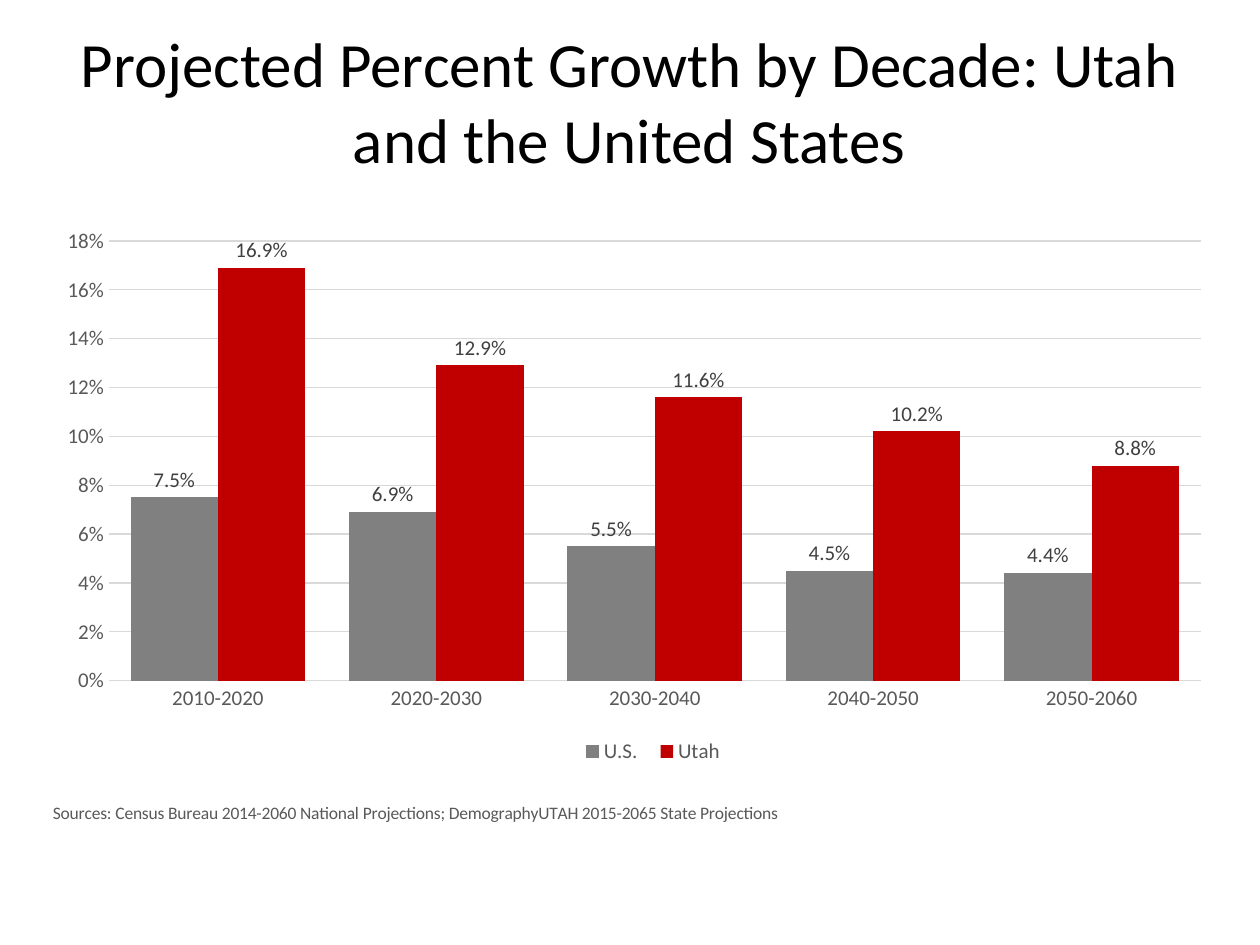
import pptx
import pptx.util
import pptx.chart.data
import pptx.enum.chart
import pptx.enum.text
import pptx.oxml
from pptx.dml.color import RGBColor
from pptx.util import Inches, Pt

# Content
TITLE = "Projected Percent Growth by Decade: Utah and the United States"
SOURCES = ("Sources: Census Bureau 2014-2060 National Projections; "
           "DemographyUTAH 2015-2065 State Projections")
DECADES = ["2010-2020", "2020-2030", "2030-2040", "2040-2050", "2050-2060"]
BLACK = RGBColor(0, 0, 0)
DARK_GRAY = RGBColor(0x40, 0x40, 0x40)
TEXT_GRAY = RGBColor(0x59, 0x59, 0x59)
GRID_GRAY = RGBColor(0xD9, 0xD9, 0xD9)
BAR_GRAY = RGBColor(0x80, 0x80, 0x80)
RED = RGBColor(0xC0, 0, 0)
GROWTH = [
    ("U.S.", BAR_GRAY, [0.075, 0.069, 0.055, 0.045, 0.044]),
    ("Utah", RED, [0.169, 0.129, 0.116, 0.102, 0.088]),
]
FONT = "Calibri"
LEFT, WIDTH = Inches(0.3), Inches(9.39)


def set_font(font, size, color):
    font.name, font.size, font.bold = FONT, Pt(size), False
    font.color.rgb = color


def place(element, index, x, y, width=None, height=None, inner=False):
    """Give a chart part a manual layout, in fractions of the chart."""
    for old in element.xpath("c:layout"):
        element.remove(old)
    target = '<c:layoutTarget val="inner"/>' if inner else ""
    sizes = "" if width is None else f'<c:w val="{width}"/><c:h val="{height}"/>'
    element.insert(index, pptx.oxml.parse_xml(
        '<c:layout xmlns:c="http://schemas.openxmlformats.org/drawingml/2006/chart">'
        f'<c:manualLayout>{target}<c:xMode val="edge"/><c:yMode val="edge"/>'
        f'<c:x val="{x}"/><c:y val="{y}"/>{sizes}</c:manualLayout></c:layout>'))


presentation = pptx.Presentation()
presentation.slide_width, presentation.slide_height = Inches(10), Inches(7.5)
slide = presentation.slides.add_slide(presentation.slide_layouts[5])

# Title
title = slide.shapes.title
title.left, title.top, title.width, title.height = LEFT, Inches(0.14), WIDTH, Inches(1.31)
title.text_frame.text = TITLE
title.text_frame.word_wrap = True
title.text_frame.auto_size = pptx.enum.text.MSO_AUTO_SIZE.NONE
paragraph = title.text_frame.paragraphs[0]
paragraph.alignment = pptx.enum.text.PP_ALIGN.CENTER
set_font(paragraph.font, 36, BLACK)

# Chart
data = pptx.chart.data.CategoryChartData(number_format="0.0%")
data.categories = DECADES
for name, color, values in GROWTH:
    data.add_series(name, values)
chart = slide.shapes.add_chart(
    pptx.enum.chart.XL_CHART_TYPE.COLUMN_CLUSTERED,
    LEFT, Inches(1.75), WIDTH, Inches(4.93), data).chart
chart.has_title = False
set_font(chart.font, 12, BLACK)
plot = chart.plots[0]
plot.gap_width, plot.overlap, plot.vary_by_categories = 50, 0, False
place(chart.element.xpath("c:chart/c:plotArea")[0], 0, 0.06, 0.033, 0.923, 0.708, inner=True)

# Columns and their labels
for series, (name, color, values) in zip(plot.series, GROWTH):
    series.format.fill.solid()
    series.format.fill.fore_color.rgb = color
    labels = series.data_labels
    labels.show_value = True
    labels.number_format, labels.number_format_is_linked = "0.0%", False
    labels.position = pptx.enum.chart.XL_LABEL_POSITION.OUTSIDE_END
    set_font(labels.font, 12, DARK_GRAY)

# Axes
for axis in (chart.category_axis, chart.value_axis):
    axis.major_tick_mark = axis.minor_tick_mark = pptx.enum.chart.XL_TICK_MARK.NONE
    axis.format.line.fill.background()
    set_font(axis.tick_labels.font, 12, TEXT_GRAY)
value_axis = chart.value_axis
value_axis.minimum_scale, value_axis.maximum_scale, value_axis.major_unit = 0, 0.18, 0.02
value_axis.tick_labels.number_format = "0%"
value_axis.tick_labels.number_format_is_linked = False
value_axis.major_gridlines.format.line.color.rgb = GRID_GRAY
value_axis.major_gridlines.format.line.width = Pt(0.75)

# Sources, as the title of the category axis
axis_title = chart.category_axis.axis_title
axis_title.text_frame.text = SOURCES
paragraph = axis_title.text_frame.paragraphs[0]
paragraph.alignment = pptx.enum.text.PP_ALIGN.LEFT
set_font(paragraph.font, 10, TEXT_GRAY)
set_font(paragraph.runs[0].font, 10, TEXT_GRAY)
place(axis_title._element, 1, 0.01, 0.93)

# Legend
chart.has_legend = True
legend = chart.legend
legend.position = pptx.enum.chart.XL_LEGEND_POSITION.BOTTOM
legend.include_in_layout = False
set_font(legend.font, 12, TEXT_GRAY)
place(legend._element, 1, 0.45, 0.82, 0.14, 0.07)

presentation.save("out.pptx")
